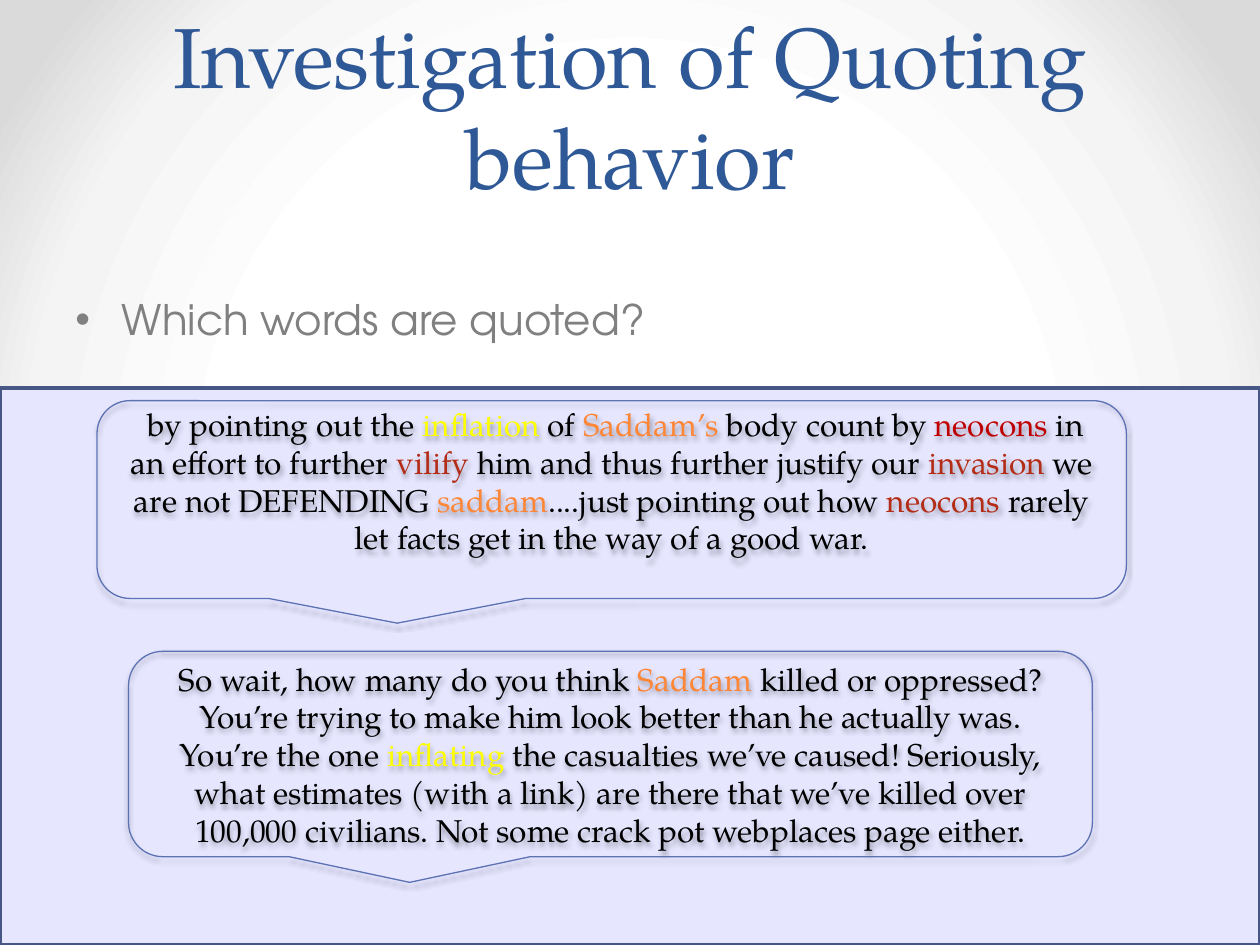
"""Builds a slide on quoting behavior with two speech callouts."""
from lxml.etree import SubElement
from pptx import Presentation
from pptx.dml.color import RGBColor
from pptx.enum.shapes import MSO_SHAPE
from pptx.enum.text import MSO_ANCHOR, PP_ALIGN
from pptx.oxml import parse_xml
from pptx.oxml.ns import qn
from pptx.util import Inches, Pt

THEME = {
    "title": ("TeX Gyre Pagella", 48.6, "2F5897"),
    "body": ("TeX Gyre Adventor", 24, "808080"),
    "quote": ("TeX Gyre Pagella", 18, "000000"),
    "hues": {"k": "000000", "y": "FFFF00", "o": "FE8637", "r": "C00000", "b": "B32C16"},
    "panel": ("475785", 2.25),
    "callout": ("5C72B2", 0.75),
    "glow": ((50, "FFFFFF"), (76, "F4F4F4"), (92, "DADADA")),
}
NS = 'xmlns:a="http://schemas.openxmlformats.org/drawingml/2006/main"'

deck = Presentation()
deck.slide_width, deck.slide_height = Inches(10), Inches(7.5)
slide = deck.slides.add_slide(deck.slide_layouts[6])
wide, high = deck.slide_width, deck.slide_height


def place(kind, box, edge=None):
    """Adds a text box or outlined shape, placed by shares of the slide."""
    spot = [int(part * side / 100) for part, side in zip(box, (wide, high) * 2)]
    if kind is None:
        return slide.shapes.add_textbox(*spot)
    item = slide.shapes.add_shape(kind, *spot)
    item.shadow.inherit = False
    item.fill.background()
    item.line.color.rgb = RGBColor.from_string(edge[0])
    item.line.width = Pt(edge[1])
    return item


def write(item, style, runs, frame, para):
    """Fills one paragraph with coloured runs and applies the formats."""
    text = item.text_frame
    line = text.paragraphs[0]
    for goal, look in ((text, {"word_wrap": True, **frame}), (line, para)):
        for key, value in look.items():
            setattr(goal, key, value)
    name, size, base = THEME[style]
    for hue, words in runs:
        run = line.add_run()
        run.text = words
        for key, value in {"name": name, "size": Pt(size)}.items():
            setattr(run.font, key, value)
        run.font.color.rgb = RGBColor.from_string(THEME["hues"].get(hue, base))
    return line


back = slide.background.fill
back.gradient()
grad = slide.background._cSld.find(".//" + qn("a:gradFill"))
stops = "".join(
    f'<a:gs pos="{pos}000"><a:srgbClr val="{hue}"/></a:gs>' for pos, hue in THEME["glow"]
)
grad.getparent().replace(grad, parse_xml(
    f'<a:gradFill {NS} rotWithShape="1"><a:gsLst>{stops}</a:gsLst><a:path path="circle">'
    '<a:fillToRect l="50000" t="50000" r="50000" b="50000"/></a:path></a:gradFill>'
))

for hue, alpha in (("FFFFFF", 100), ("CCCCFF", 49)):
    panel = place(MSO_SHAPE.RECTANGLE, (0, 41.07, 100, 58.93), THEME["panel"])
    panel.fill.solid()
    panel.fill.fore_color.rgb = RGBColor.from_string(hue)
    tint = panel._element.spPr.find(qn("a:solidFill"))[0]
    SubElement(tint, qn("a:alpha"), val=f"{alpha}000")

body = place(None, (5, 30.4, 90, 66))
line = write(body, "body", [("", "Which words are quoted?")], {}, {"space_before": Pt(4.8)})
props = line._p.get_or_add_pPr()
for key, value in {"marL": 0.37, "indent": -0.37}.items():
    props.set(key, str(Inches(value)))
SubElement(props, qn("a:buFont"), typeface="Arial")
SubElement(props, qn("a:buChar"), char="•")

quotes = [
    ((7.7, 42.4, 81.7, 20.93), 0.35, [
        ("k", " by pointing out the "), ("y", "inflation "), ("k", "of "),
        ("o", "Saddam’s "), ("k", "body count by "), ("r", "neocons "),
        ("k", "in an effort to further "), ("b", "vilify "),
        ("k", "him and thus further justify our "), ("b", "invasion "),
        ("k", "we are not DEFENDING "), ("o", "saddam"),
        ("k", "....just pointing out how "), ("b", "neocons "),
        ("k", "rarely let facts get in the way of a good war."),
    ]),
    ((10.2, 68.93, 76.5, 21.73), 0.05, [
        ("k", "So wait, how many do you think "), ("o", "Saddam "),
        ("k", "killed or oppressed? You’re trying to make him look better than "
              "he actually was. You’re the one "),
        ("y", "inflating "),
        ("k", "the casualties we’ve caused! Seriously, what estimates (with a link) "
              "are there that we’ve killed over 100,000 civilians. Not some crack pot "
              "webplaces page either."),
    ]),
]
for box, foot, runs in quotes:
    bubble = place(MSO_SHAPE.ROUNDED_RECTANGULAR_CALLOUT, box, THEME["callout"])
    frame = {
        "vertical_anchor": MSO_ANCHOR.MIDDLE, "margin_bottom": Inches(foot),
        "margin_left": Inches(0.16), "margin_right": Inches(0.16),
    }
    write(bubble, "quote", runs, frame, {"alignment": PP_ALIGN.CENTER})
    shade = SubElement(
        bubble._element.spPr.find(qn("a:effectLst")), qn("a:outerShdw"),
        blurRad=str(Pt(3.1)), dist=str(Pt(1.8)), dir="5400000", rotWithShape="0",
    )
    SubElement(SubElement(shade, qn("a:srgbClr"), val="000000"), qn("a:alpha"), val="35000")

title = place(None, (5, 10, 90, 23.33))
write(
    title, "title", [("", "Investigation of Quoting behavior")],
    {"vertical_anchor": MSO_ANCHOR.BOTTOM, "margin_bottom": Inches(0.86)},
    {"alignment": PP_ALIGN.CENTER, "line_spacing": Pt(58)},
)

deck.save("out.pptx")
